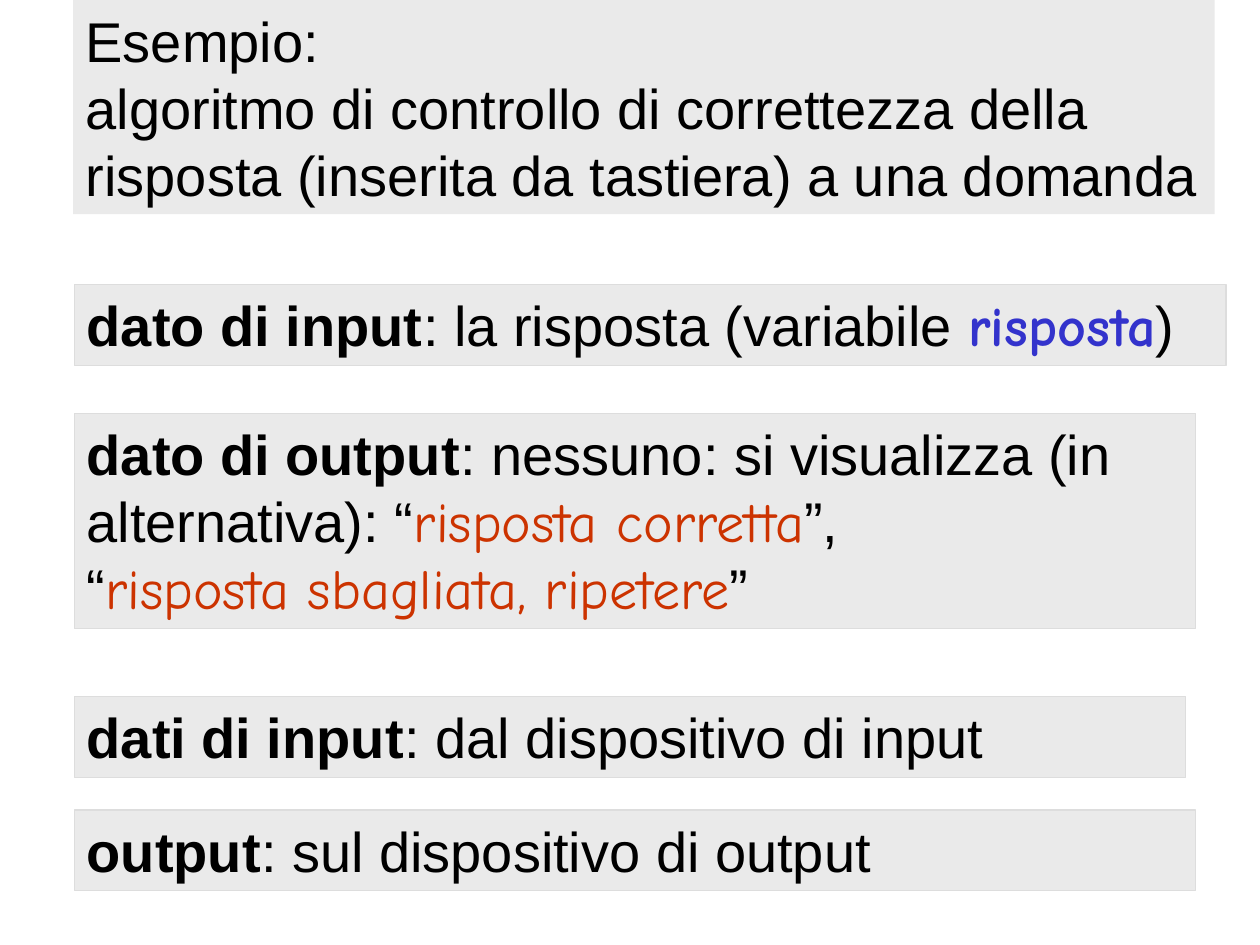
"""Build the slide on the answer-checking algorithm."""
import pptx
import pptx.dml.color
import pptx.enum.shapes
import pptx.enum.text
import pptx.util

WIDTH, HEIGHT = pptx.util.Inches(10), pptx.util.Inches(7.5)
BLACK = pptx.dml.color.RGBColor(0x00, 0x00, 0x00)
BLUE = pptx.dml.color.RGBColor(0x33, 0x33, 0xCC)
RED = pptx.dml.color.RGBColor(0xCC, 0x33, 0x00)
PANEL = pptx.dml.color.RGBColor(0xEA, 0xEA, 0xEA)
BORDER = pptx.dml.color.RGBColor(0xDD, 0xDD, 0xDD)
BOLD = {"bold": True}
VARIABLE = {"font": "Comic Neue", "color": BLUE, "bold": True}
MESSAGE = {"font": "Comic Neue", "color": RED}
LEFT = 0.59
TITLE_BOX = (0.58, 0, 9.06, 1.7)
TITLE = [
    [("Esempio:", {})],
    [("algoritmo di controllo di correttezza della risposta "
      "(inserita da tastiera) a una domanda", {})],
]
DEFINITIONS = [
    ((LEFT, 2.26, 9.14, 0.64), [
        [("dato di input", BOLD), (": la risposta (variabile ", {}),
         ("risposta", VARIABLE), (")", {})],
    ]),
    ((LEFT, 3.28, 8.9, 1.71), [
        [("dato di output", BOLD),
         (": nessuno: si visualizza (in alternativa): “", {}),
         ("risposta corretta", MESSAGE), ("”,", {})],
        [("“", {}), ("risposta sbagliata, ripetere", MESSAGE), ("”", {})],
    ]),
    ((LEFT, 5.53, 8.82, 0.64), [
        [("dati di input", BOLD), (": dal dispositivo di input", {})],
    ]),
    ((LEFT, 6.43, 8.9, 0.64), [
        [("output", BOLD), (": sul dispositivo di output", {})],
    ]),
]


def add_text(paragraph, text, font="Arial", size=32, color=BLACK, bold=False):
    """Append one formatted run to a paragraph."""
    run = paragraph.add_run()
    run.text = text
    run.font.name = font
    run.font.size = pptx.util.Pt(size)
    run.font.color.rgb = color
    run.font.bold = bold


def fill_panel(panel, paragraphs):
    """Give a panel its grey ground and its left-aligned paragraphs."""
    panel.fill.solid()
    panel.fill.fore_color.rgb = PANEL
    frame = panel.text_frame
    frame.word_wrap = True
    frame.auto_size = pptx.enum.text.MSO_AUTO_SIZE.NONE
    frame.vertical_anchor = pptx.enum.text.MSO_ANCHOR.TOP
    for index, runs in enumerate(paragraphs):
        paragraph = frame.add_paragraph() if index else frame.paragraphs[0]
        paragraph.alignment = pptx.enum.text.PP_ALIGN.LEFT
        for text, style in runs:
            add_text(paragraph, text, **style)


def place_title(slide, box):
    """Move the title placeholder into its box and fill it."""
    title = slide.shapes.title
    title.left, title.top, title.width, title.height = map(pptx.util.Inches, box)
    fill_panel(title, TITLE)


def place_definition(slide, box, paragraphs):
    """Draw one bordered definition panel in its box."""
    panel = slide.shapes.add_shape(
        pptx.enum.shapes.MSO_SHAPE.RECTANGLE, *map(pptx.util.Inches, box))
    panel.shadow.inherit = False
    panel.line.color.rgb = BORDER
    panel.line.width = pptx.util.Pt(0.75)
    fill_panel(panel, paragraphs)


def main():
    """Build the slide and save it."""
    deck = pptx.Presentation()
    deck.slide_width, deck.slide_height = WIDTH, HEIGHT
    slide = deck.slides.add_slide(deck.slide_layouts.get_by_name("Title Only"))
    place_title(slide, TITLE_BOX)
    for box, paragraphs in DEFINITIONS:
        place_definition(slide, box, paragraphs)
    deck.save("out.pptx")


if __name__ == "__main__":
    main()
